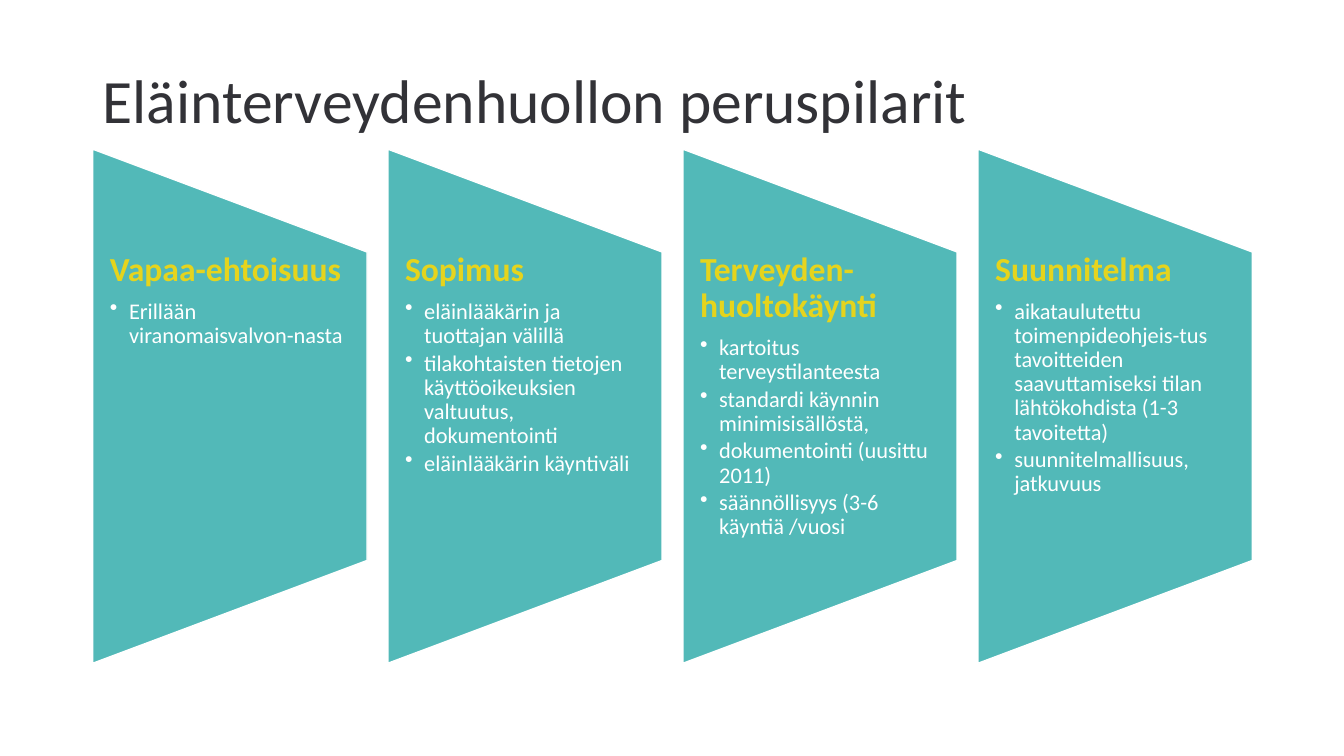
from lxml import etree
from pptx import Presentation
from pptx.dml.color import RGBColor
from pptx.enum.shapes import MSO_SHAPE
from pptx.enum.text import MSO_ANCHOR, PP_ALIGN
from pptx.oxml.ns import qn
from pptx.util import Inches, Pt

TRAPEZOID = MSO_SHAPE.FLOWCHART_MANUAL_OPERATION
TOP, MIDDLE = MSO_ANCHOR.TOP, MSO_ANCHOR.MIDDLE
LEFT = PP_ALIGN.LEFT

COLORS = {"title": "323237", "pillar": "52B9B8", "heading": "E5D41D", "white": "FFFFFF"}
FONT = "Calibri"

MARGIN_LEFT, MARGIN_RIGHT = 0.92, 12.42
PILLAR_WIDTH, PILLAR_HEIGHT, PILLAR_MIDDLE = 2.72, 5.1, 4.03
TEXT_HEIGHT = 3.06

TITLE = "Eläinterveydenhuollon peruspilarit"
PILLARS = [
    ("Vapaa-ehtoisuus", ["Erillään viranomaisvalvon-nasta"]),
    ("Sopimus", [
        "eläinlääkärin ja tuottajan välillä",
        "tilakohtaisten tietojen käyttöoikeuksien valtuutus, dokumentointi",
        "eläinlääkärin käyntiväli",
    ]),
    ("Terveyden-huoltokäynti", [
        "kartoitus terveystilanteesta",
        "standardi käynnin minimisisällöstä,",
        "dokumentointi (uusittu 2011)",
        "säännöllisyys (3-6 käyntiä /vuosi",
    ]),
    ("Suunnitelma", [
        "aikataulutettu toimenpideohjeis-tus tavoitteiden saavuttamiseksi tilan "
        "lähtökohdista (1-3 tavoitetta)",
        "suunnitelmallisuus, jatkuvuus",
    ]),
]


class SlideBuilder:
    def __init__(self, slide):
        self.slide = slide

    def color(self, name):
        return RGBColor.from_string(COLORS[name])

    def text_frame(self, left, top, width, height, anchor):
        box = self.slide.shapes.add_textbox(
            Inches(left), Inches(top), Inches(width), Inches(height))
        frame = box.text_frame
        frame.word_wrap = True
        frame.vertical_anchor = anchor
        return frame

    def set_text(self, paragraph, text, size, color, bold=False, space_after=0):
        paragraph.text = text
        paragraph.alignment = LEFT
        paragraph.line_spacing = 0.9
        paragraph.space_after = Pt(space_after)
        font = paragraph.runs[0].font
        font.name = FONT
        font.size = Pt(size)
        font.bold = bold
        font.color.rgb = self.color(color)

    def bullet(self, paragraph, text):
        paragraph.level = 1
        self.set_text(paragraph, text, 16, "white", space_after=2.4)
        properties = paragraph._p.get_or_add_pPr()
        properties.set("marL", str(Inches(0.19)))
        properties.set("indent", str(-Inches(0.19)))
        etree.SubElement(properties, qn("a:buChar")).set("char", "•")

    def title(self, text):
        frame = self.text_frame(MARGIN_LEFT, 0.4, MARGIN_RIGHT - MARGIN_LEFT, 1.26, MIDDLE)
        self.set_text(frame.paragraphs[0], text, 44, "title")

    def trapezoid(self, left):
        """Turn a wide shape a quarter so that its long edge stands on the left."""
        shape = self.slide.shapes.add_shape(
            TRAPEZOID,
            Inches(left + (PILLAR_WIDTH - PILLAR_HEIGHT) / 2),
            Inches(PILLAR_MIDDLE - PILLAR_WIDTH / 2),
            Inches(PILLAR_HEIGHT), Inches(PILLAR_WIDTH))
        shape.rotation = 270
        shape.shadow.inherit = False
        shape.fill.solid()
        shape.fill.fore_color.rgb = self.color("pillar")
        shape.line.color.rgb = self.color("white")
        shape.line.width = Pt(1)

    def pillar(self, left, heading, points):
        self.trapezoid(left)
        frame = self.text_frame(
            left, PILLAR_MIDDLE - TEXT_HEIGHT / 2, PILLAR_WIDTH, TEXT_HEIGHT, TOP)
        frame.margin_left = frame.margin_right = Inches(0.17)
        frame.margin_top = frame.margin_bottom = 0
        self.set_text(frame.paragraphs[0], heading, 24, "heading", bold=True, space_after=8.4)
        for point in points:
            self.bullet(frame.add_paragraph(), point)


def main():
    presentation = Presentation()
    presentation.slide_width = Inches(13.33)
    presentation.slide_height = Inches(7.5)
    builder = SlideBuilder(presentation.slides.add_slide(presentation.slide_layouts[6]))
    builder.title(TITLE)
    pitch = (MARGIN_RIGHT - MARGIN_LEFT - PILLAR_WIDTH) / (len(PILLARS) - 1)
    for index, (heading, points) in enumerate(PILLARS):
        builder.pillar(MARGIN_LEFT + index * pitch, heading, points)
    presentation.save("out.pptx")


if __name__ == "__main__":
    main()
